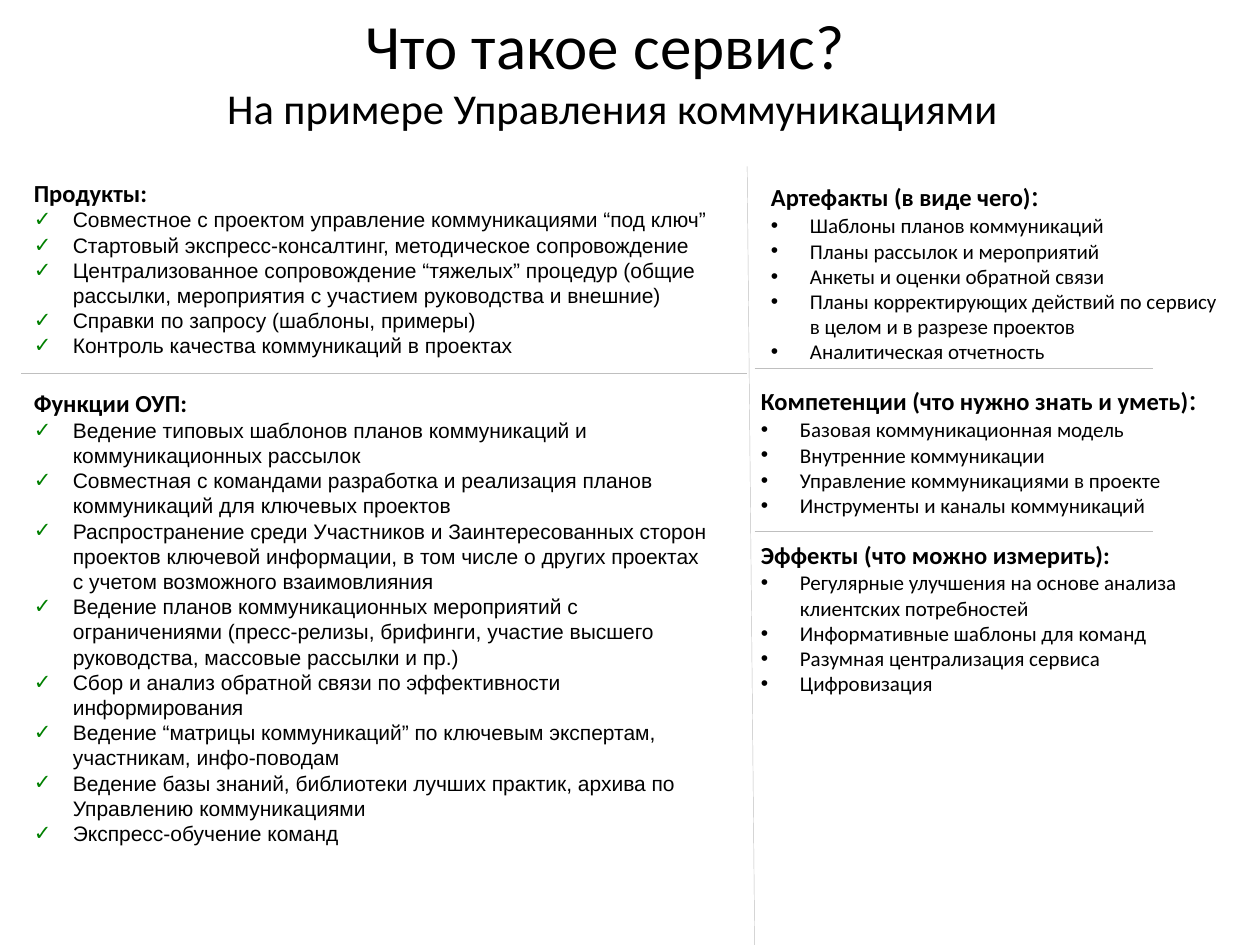
from pptx import Presentation
from pptx.dml.color import RGBColor
from pptx.enum.shapes import MSO_CONNECTOR
from pptx.enum.text import MSO_ANCHOR, PP_ALIGN
from pptx.oxml.ns import qn
from pptx.util import Inches, Pt
from lxml import etree

LINE = MSO_CONNECTOR.STRAIGHT
MID, TOP = MSO_ANCHOR.MIDDLE, MSO_ANCHOR.TOP
MID_X, LEFT = PP_ALIGN.CENTER, PP_ALIGN.LEFT

THEME = {
    "head_font": "Calibri", "list_font": "Arial",
    "ink": "000000", "tick": "008000", "rule": "BFBFBF",
    "title": 36, "sub": 24.3, "head": 14, "colon": 18, "item": 12,
    "gap": 17, "rule_width": 0.25,
}

TITLE = ("Что такое сервис? ", "На примере Управления коммуникациями")
TITLE_BOX = (0.67, 0.29, 8.38, 0.53)

LEFT_BOX = (0.17, 1.36, 5.58, 5.45)
LEFT_PARTS = [
    ("Продукты:", "", [
        "Совместное с проектом управление коммуникациями “под ключ”",
        "Стартовый экспресс-консалтинг, методическое сопровождение",
        "Централизованное сопровождение “тяжелых” процедур (общие рассылки, мероприятия с участием руководства и внешние)",
        "Справки по запросу (шаблоны, примеры)",
        "Контроль качества коммуникаций в проектах",
    ]),
    ("Функции ОУП:", "", [
        "Ведение типовых шаблонов планов коммуникаций и коммуникационных рассылок",
        "Совместная с командами разработка и реализация планов коммуникаций для ключевых проектов",
        "Распространение среди Участников и Заинтересованных сторон проектов ключевой информации, в том числе о других проектах с учетом возможного взаимовлияния",
        "Ведение планов коммуникационных мероприятий с ограничениями (пресс-релизы, брифинги, участие высшего руководства, массовые рассылки и пр.)",
        "Cбор и анализ обратной связи по эффективности информирования",
        "Ведение “матрицы коммуникаций” по ключевым экспертам, участникам, инфо-поводам",
        "Ведение базы знаний, библиотеки лучших практик, архива по Управлению коммуникациями",
        "Экспресс-обучение команд",
    ]),
]

RIGHT_PARTS = [
    ((6.02, 1.34, 3.79, 1.62), ("Артефакты (в виде чего)", ":", [
        "Шаблоны планов коммуникаций",
        "Планы рассылок и мероприятий",
        "Анкеты и оценки обратной связи",
        "Планы корректирующих действий по сервису в целом и в разрезе проектов",
        "Аналитическая отчетность",
    ])),
    ((5.94, 2.96, 3.79, 1.41), ("Компетенции (что нужно знать и уметь)", ":", [
        "Базовая коммуникационная модель",
        "Внутренние коммуникации",
        "Управление коммуникациями в проекте",
        "Инструменты и каналы коммуникаций",
    ])),
    ((5.94, 4.24, 3.79, 1.35), ("Эффекты (что можно измерить):", "", [
        "Регулярные улучшения на основе анализа клиентских потребностей",
        "Информативные шаблоны для команд",
        "Разумная централизация сервиса",
        "Цифровизация",
    ])),
]

RULES = [
    (5.93, 1.32, 5.99, 7.5),
    (5.99, 2.92, 9.15, 2.92),
    (5.99, 4.22, 9.15, 4.22),
    (0.17, 2.96, 5.93, 2.96),
]


def add_run(para, text, size, font=THEME["head_font"], bold=False):
    run = para.add_run()
    run.text = text
    run.font.size = Pt(size)
    run.font.name = font
    run.font.bold = bold
    run.font.color.rgb = RGBColor.from_string(THEME["ink"])


def add_box(slide, box, anchor=TOP):
    frame = slide.shapes.add_textbox(*map(Inches, box)).text_frame
    frame.word_wrap = True
    frame.vertical_anchor = anchor
    return frame


def next_para(frame):
    first = frame.paragraphs[0]
    return frame.add_paragraph() if first.runs else first


def add_mark(para, mark, color):
    props = para._p.get_or_add_pPr()
    props.set("marL", str(Inches(0.31)))
    props.set("indent", str(-Inches(0.31)))
    tint = etree.SubElement(props, qn("a:buClr"))
    etree.SubElement(tint, qn("a:srgbClr"), val=color)
    etree.SubElement(props, qn("a:buFont"), typeface=THEME["list_font"])
    etree.SubElement(props, qn("a:buChar"), char=mark)


def add_part(frame, part, mark, color, font, gap=0):
    head, colon, items = part
    para = next_para(frame)
    para.alignment = LEFT
    para.space_before = Pt(gap)
    add_run(para, head, THEME["head"], bold=True)
    if colon:
        add_run(para, colon, THEME["colon"])
    for item in items:
        para = next_para(frame)
        add_mark(para, mark, color)
        add_run(para, item, THEME["item"], font)


def add_rule(slide, ends):
    rule = slide.shapes.add_connector(LINE, *map(Inches, ends))
    rule.line.color.rgb = RGBColor.from_string(THEME["rule"])
    rule.line.width = Pt(THEME["rule_width"])
    etree.SubElement(rule._element.spPr, qn("a:effectLst"))


def main():
    deck = Presentation()
    deck.slide_width, deck.slide_height = Inches(10), Inches(7.5)
    slide = deck.slides.add_slide(deck.slide_layouts[6])

    para = add_box(slide, TITLE_BOX, MID).paragraphs[0]
    para.alignment = MID_X
    add_run(para, TITLE[0], THEME["title"])
    para.add_line_break()
    add_run(para, TITLE[1], THEME["sub"])

    for box, part in RIGHT_PARTS:
        add_part(add_box(slide, box), part, "•", THEME["ink"], THEME["head_font"])

    frame = add_box(slide, LEFT_BOX)
    for i, part in enumerate(LEFT_PARTS):
        add_part(frame, part, "✓", THEME["tick"], THEME["list_font"], THEME["gap"] * i)

    for ends in RULES:
        add_rule(slide, ends)

    deck.save("out.pptx")


if __name__ == "__main__":
    main()
